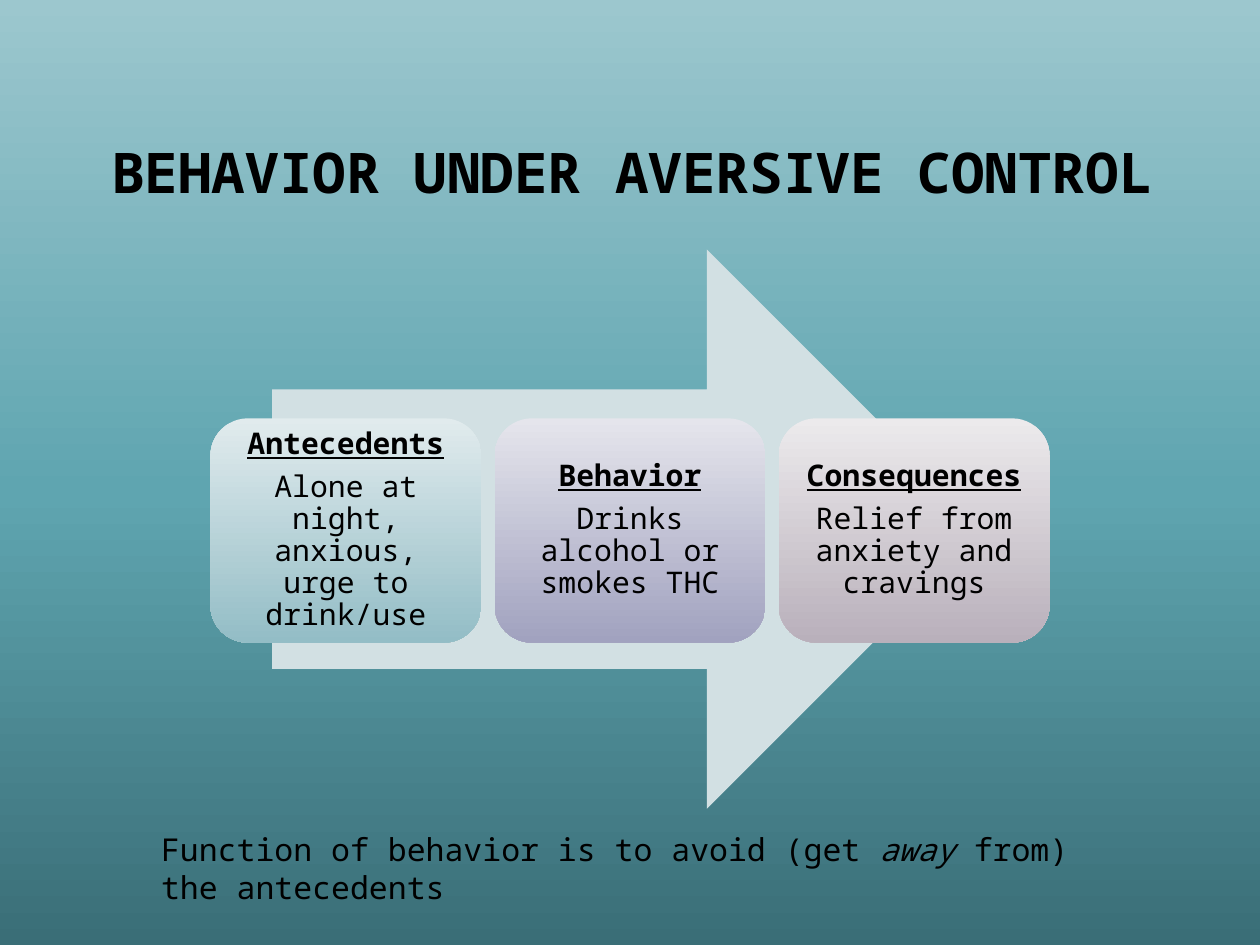
"""Build a slide on behavior under aversive control: three stages along an arrow."""
import copy
from typing import NamedTuple

import pptx
import pptx.dml.color
import pptx.dml.fill
import pptx.enum.shapes
import pptx.enum.text
import pptx.oxml.ns
import pptx.shapes.autoshape
import pptx.slide
import pptx.text.text
import pptx.util

Inches = pptx.util.Inches
Pt = pptx.util.Pt
SHAPES = pptx.enum.shapes.MSO_SHAPE
ALIGN = pptx.enum.text.PP_ALIGN
MIDDLE = pptx.enum.text.MSO_ANCHOR.MIDDLE

FONT = "Noto Sans Mono"
COLORS = {
    "text": "000000",
    "arrow": "D2E0E3",
    "deep": "3A6E77",
    "teal": "5FA5B0",
    "mist": "9CC7CE",
    "antecedent_top": "E1EBED",
    "antecedent_base": "93BDC6",
    "behavior_top": "E5E5EC",
    "behavior_base": "A1A2BF",
    "consequence_top": "ECEAEC",
    "consequence_base": "B9B0BB",
}
STAGE_LEFT, STAGE_TOP = 1.67, 3.32
STAGE_WIDTH, STAGE_HEIGHT = 2.15, 1.78
STAGE_STEP = 2.255


class Stage(NamedTuple):
    heading: str
    detail: str
    top_color: str
    base_color: str


STAGES = [
    Stage("Antecedents", "Alone at night, anxious, urge to drink/use",
          "antecedent_top", "antecedent_base"),
    Stage("Behavior", "Drinks alcohol or smokes THC",
          "behavior_top", "behavior_base"),
    Stage("Consequences", "Relief from anxiety and cravings",
          "consequence_top", "consequence_base"),
]


def rgb(name: str) -> pptx.dml.color.RGBColor:
    """Return the named color."""
    return pptx.dml.color.RGBColor.from_string(COLORS[name])


def style_run(run: pptx.text.text._Run, size: int, bold: bool = False,
              italic: bool = False, underline: bool = False) -> None:
    """Apply the slide font to a run."""
    font = run.font
    font.name, font.size = FONT, Pt(size)
    font.bold, font.italic, font.underline = bold, italic, underline
    font.color.rgb = rgb("text")


def color_stops(fill: pptx.dml.fill.FillFormat, names: list[str],
                positions: list[float], angle: int) -> None:
    """Color the stops of a gradient fill and turn it."""
    fill.gradient_angle = angle
    for stop, name, position in zip(fill.gradient_stops, names, positions):
        stop.color.rgb = rgb(name)
        stop.position = position


def paint_background(slide: pptx.slide.Slide) -> None:
    """Fill the background with a three-stop gradient."""
    fill = slide.background.fill
    fill.gradient()
    stops = slide.element.find(".//" + pptx.oxml.ns.qn("a:gsLst"))
    stops.append(copy.deepcopy(stops[-1]))
    color_stops(fill, ["deep", "teal", "mist"], [0, 0.48, 1], 90)


def add_plain_shape(slide: pptx.slide.Slide, kind: SHAPES, left: float, top: float,
                    width: float, height: float) -> pptx.shapes.autoshape.Shape:
    """Add a preset shape without line or shadow."""
    shape = slide.shapes.add_shape(
        kind, Inches(left), Inches(top), Inches(width), Inches(height))
    shape.shadow.inherit = False
    shape.line.fill.background()
    return shape


def add_stage(slide: pptx.slide.Slide, stage: Stage, left: float) -> None:
    """Add a rounded stage box with its heading and detail."""
    box = add_plain_shape(slide, SHAPES.ROUNDED_RECTANGLE, left, STAGE_TOP,
                          STAGE_WIDTH, STAGE_HEIGHT)
    box.fill.gradient()
    color_stops(box.fill, [stage.top_color, stage.base_color], [0, 1], 270)
    frame = box.text_frame
    frame.word_wrap = True
    frame.vertical_anchor = MIDDLE
    frame.margin_left = frame.margin_right = Inches(0.07)
    frame.margin_top = frame.margin_bottom = Inches(0.07)
    frame.text = f"{stage.heading}\n{stage.detail}"
    for paragraph, is_heading in zip(frame.paragraphs, (True, False)):
        paragraph.alignment = ALIGN.CENTER
        paragraph.line_spacing = 0.9
        paragraph.space_after = Pt(6)
        style_run(paragraph.runs[0], 17, bold=is_heading, underline=is_heading)


def add_text_frame(slide: pptx.slide.Slide, left: float, top: float, width: float,
                   height: float) -> pptx.text.text.TextFrame:
    """Add a wrapping text box and return its frame."""
    frame = slide.shapes.add_textbox(
        Inches(left), Inches(top), Inches(width), Inches(height)).text_frame
    frame.word_wrap = True
    return frame


def add_title(slide: pptx.slide.Slide) -> None:
    """Add the centered title."""
    title = add_text_frame(slide, 0.67, 0.67, 8.7, 1.45)
    title.vertical_anchor = MIDDLE
    title.text = "BEHAVIOR UNDER AVERSIVE CONTROL"
    line = title.paragraphs[0]
    line.alignment = ALIGN.CENTER
    line.line_spacing = 0.9
    style_run(line.runs[0], 32, bold=True)


def add_function_note(slide: pptx.slide.Slide) -> None:
    """Add the closing sentence with its stressed word."""
    sentence = add_text_frame(slide, 1.18, 6.54, 7.68, 0.4).paragraphs[0]
    for words in ("Function of behavior is to avoid (get ", "away",
                  " from) the antecedents"):
        run = sentence.add_run()
        run.text = words
        style_run(run, 18, italic=words == "away")


def main() -> None:
    """Build and save the slide."""
    deck = pptx.Presentation()
    deck.slide_width, deck.slide_height = Inches(10), Inches(7.5)
    slide = deck.slides.add_slide(deck.slide_layouts[6])
    paint_background(slide)
    arrow = add_plain_shape(slide, SHAPES.RIGHT_ARROW, 2.16, 1.98, 5.67, 4.44)
    arrow.fill.solid()
    arrow.fill.fore_color.rgb = rgb("arrow")
    for index, stage in enumerate(STAGES):
        add_stage(slide, stage, STAGE_LEFT + index * STAGE_STEP)
    add_title(slide)
    add_function_note(slide)
    deck.save("out.pptx")


if __name__ == "__main__":
    main()
